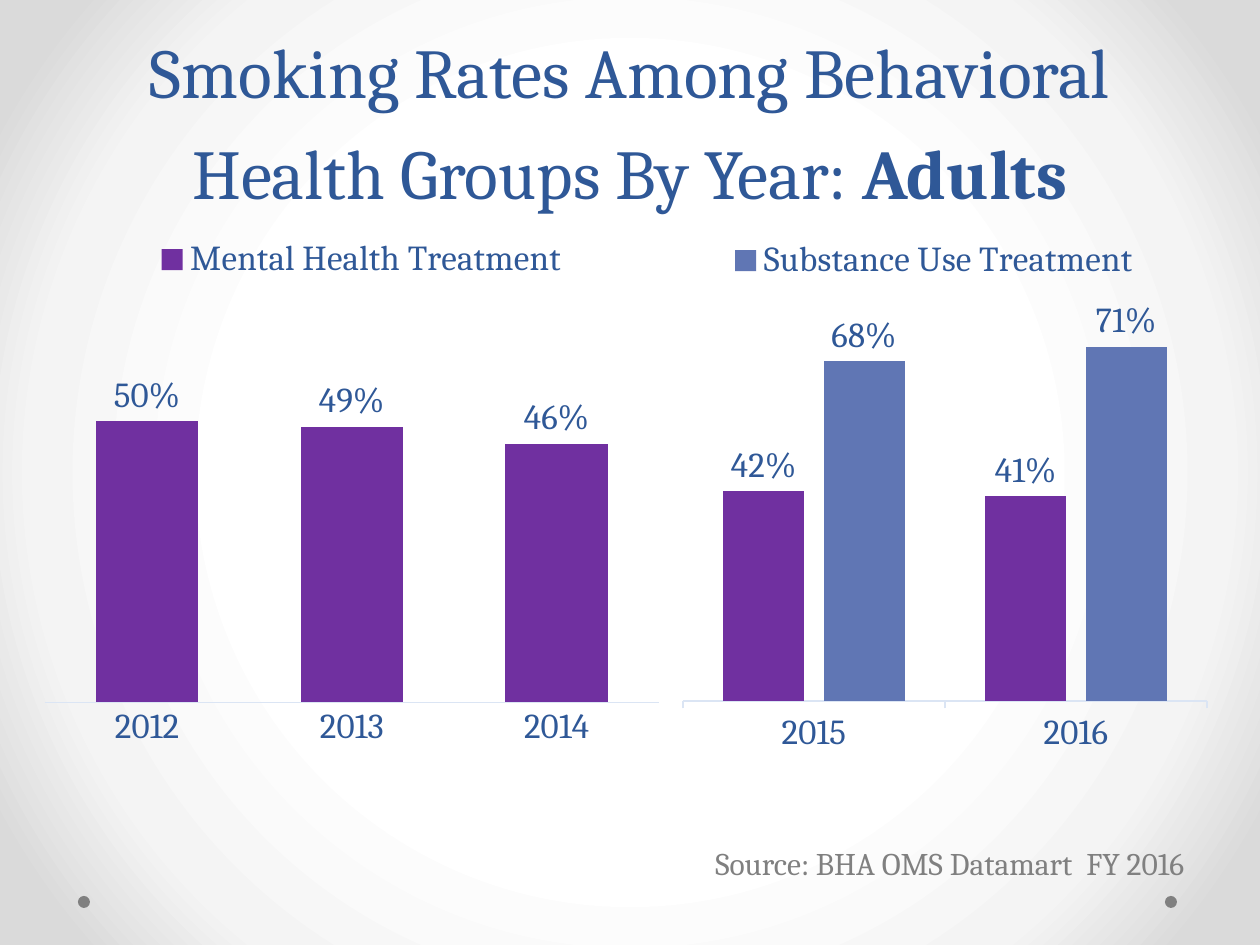
"""Build the slide on adult smoking rates by behavioral health group."""
from lxml import etree
from pptx import Presentation
from pptx import util as u
from pptx.chart.data import CategoryChartData
from pptx.dml.color import RGBColor
from pptx.enum import chart as charts, shapes, text
from pptx.oxml.ns import qn

COLORS = {
    "navy": "2F5897", "gray": "808080", "purple": "7030A0", "blue": "6076B4",
    "axis": "DBE5F4", "center": "FFFFFF", "ring": "F4F4F4", "edge": "DADADA",
}


def px(length):
    return u.Emu(round(length * 914400 / 126))


def rgb(name):
    return RGBColor.from_string(COLORS[name])


def add_xml(parent, tag, **attributes):
    return etree.SubElement(parent, qn(tag), attributes)


def manual_layout(target, x, y, w, h):
    layout = etree.Element(qn("c:layout"))
    manual = add_xml(layout, "c:manualLayout")
    if target:
        add_xml(manual, "c:layoutTarget", val=target)
    add_xml(manual, "c:xMode", val="edge")
    add_xml(manual, "c:yMode", val="edge")
    for tag, share in zip("xywh", (x, y, w, h)):
        add_xml(manual, f"c:{tag}", val=str(share))
    return layout


class SlideBuilder:
    """Hold the style and the current slide."""

    def __init__(self, page, family="Cambria"):
        self.page = page
        self.family = family

    def style(self, font, size, color="navy"):
        font.name = self.family
        font.size = u.Pt(size)
        font.color.rgb = rgb(color)

    def background(self, stops):
        self.page.background.fill.gradient()
        gradient = self.page.element.xpath(".//p:bg//a:gradFill")[0]
        for child in list(gradient):
            gradient.remove(child)
        stop_list = add_xml(gradient, "a:gsLst")
        for percent, color in stops:
            stop = add_xml(stop_list, "a:gs", pos=str(percent * 1000))
            add_xml(stop, "a:srgbClr", val=COLORS[color])
        circle = add_xml(gradient, "a:path", path="circle")
        add_xml(circle, "a:fillToRect", l="50000", t="50000", r="50000", b="50000")

    def dot(self, left, top, size):
        dot = self.page.shapes.add_shape(
            shapes.MSO_SHAPE.OVAL, px(left), px(top), px(size), px(size))
        dot.shadow.inherit = False
        dot.fill.solid()
        dot.fill.fore_color.rgb = rgb("gray")
        dot.line.fill.background()

    def title(self, left, top, width, height, plain, strong):
        box = self.page.shapes.title
        box.left, box.top, box.width, box.height = map(px, (left, top, width, height))
        frame = box.text_frame
        frame.word_wrap = True
        frame.auto_size = text.MSO_AUTO_SIZE.NONE
        frame.vertical_anchor = text.MSO_ANCHOR.BOTTOM
        para = frame.paragraphs[0]
        para.alignment = text.PP_ALIGN.CENTER
        para.line_spacing = u.Pt(58)
        self.style(para.font, 40)
        para.add_run().text = plain
        span = para.add_run()
        span.text = strong
        span.font.bold = True

    def note(self, left, top, width, height, words):
        box = self.page.shapes.add_textbox(px(left), px(top), px(width), px(height))
        frame = box.text_frame
        frame.word_wrap = True
        frame.auto_size = text.MSO_AUTO_SIZE.SHAPE_TO_FIT_TEXT
        para = frame.paragraphs[0]
        para.text = words
        self.style(para.font, 18, "gray")

    def columns(self, place, years, series, tick, plot_place, legend_place, hidden=()):
        data = CategoryChartData(number_format="0%")
        data.categories = years
        for name, values, _ in series:
            data.add_series(name, values)
        chart = self.page.shapes.add_chart(
            charts.XL_CHART_TYPE.COLUMN_CLUSTERED, *map(px, place), data).chart
        self.style(chart.font, 20)
        chart.has_title = False

        plot = chart.plots[0]
        plot.gap_width, plot.overlap = 100, -24
        plot.vary_by_categories = False
        for bars, (_, _, color) in zip(plot.series, series):
            bars.format.fill.solid()
            bars.format.fill.fore_color.rgb = rgb(color)
            bars.invert_if_negative = False
            labels = bars.data_labels
            labels.show_value = True
            labels.position = charts.XL_LABEL_POSITION.OUTSIDE_END
            self.style(labels.font, 20)

        scale = chart.value_axis
        scale.minimum_scale, scale.maximum_scale = 0, 1
        scale.has_major_gridlines = False
        scale.visible = False
        axis = chart.category_axis
        axis.major_tick_mark = tick
        axis.format.line.color.rgb = rgb("axis")
        axis.format.line.width = u.Pt(0.75)
        self.style(axis.tick_labels.font, 20)

        chart.has_legend = True
        chart.legend.position = charts.XL_LEGEND_POSITION.BOTTOM
        chart.legend.include_in_layout = False
        self.style(chart.legend.font, 20)
        self.arrange(chart, plot_place, legend_place, hidden)

    def arrange(self, chart, plot_place, legend_place, hidden):
        for old in chart.element.xpath(".//c:plotArea/c:layout | .//c:legend/c:layout"):
            old.getparent().remove(old)
        area = chart.element.xpath(".//c:plotArea")[0]
        area.insert(0, manual_layout("inner", *plot_place))
        position = chart.element.xpath(".//c:legend/c:legendPos")[0]
        position.addnext(manual_layout(None, *legend_place))
        for index in hidden:
            entry = etree.Element(qn("c:legendEntry"))
            add_xml(entry, "c:idx", val=str(index))
            add_xml(entry, "c:delete", val="1")
            position.addnext(entry)


def main():
    deck = Presentation()
    deck.slide_width, deck.slide_height = px(1260), px(945)
    slide = SlideBuilder(deck.slides.add_slide(deck.slide_layouts[5]))
    slide.background([(50, "center"), (76, "ring"), (92, "edge")])
    for left in (1165, 78):
        slide.dot(left, 896, 12)
    slide.title(63, 0, 1134, 220,
                "Smoking Rates Among Behavioral Health Groups By Year: ", "Adults")
    slide.columns(
        (32, 126, 640, 703), ["2012", "2013", "2014"],
        [("Mental Health Treatment", (0.5, 0.49, 0.46), "purple")],
        charts.XL_TICK_MARK.NONE, (0.02, 0.02, 0.96, 0.8), (0.19, 0.16, 0.65, 0.06))
    slide.columns(
        (672, 189, 546, 640), ["2015", "2016"],
        [("Series 1", (0.42, 0.41), "purple"),
         ("Substance Use Treatment", (0.68, 0.71), "blue")],
        charts.XL_TICK_MARK.OUTSIDE, (0.02, 0.02, 0.96, 0.78),
        (0.1, 0.08, 0.76, 0.06), hidden=[0])
    slide.note(703, 838, 577, 50, "Source: BHA OMS Datamart  FY 2016")
    deck.save("out.pptx")


if __name__ == "__main__":
    main()
